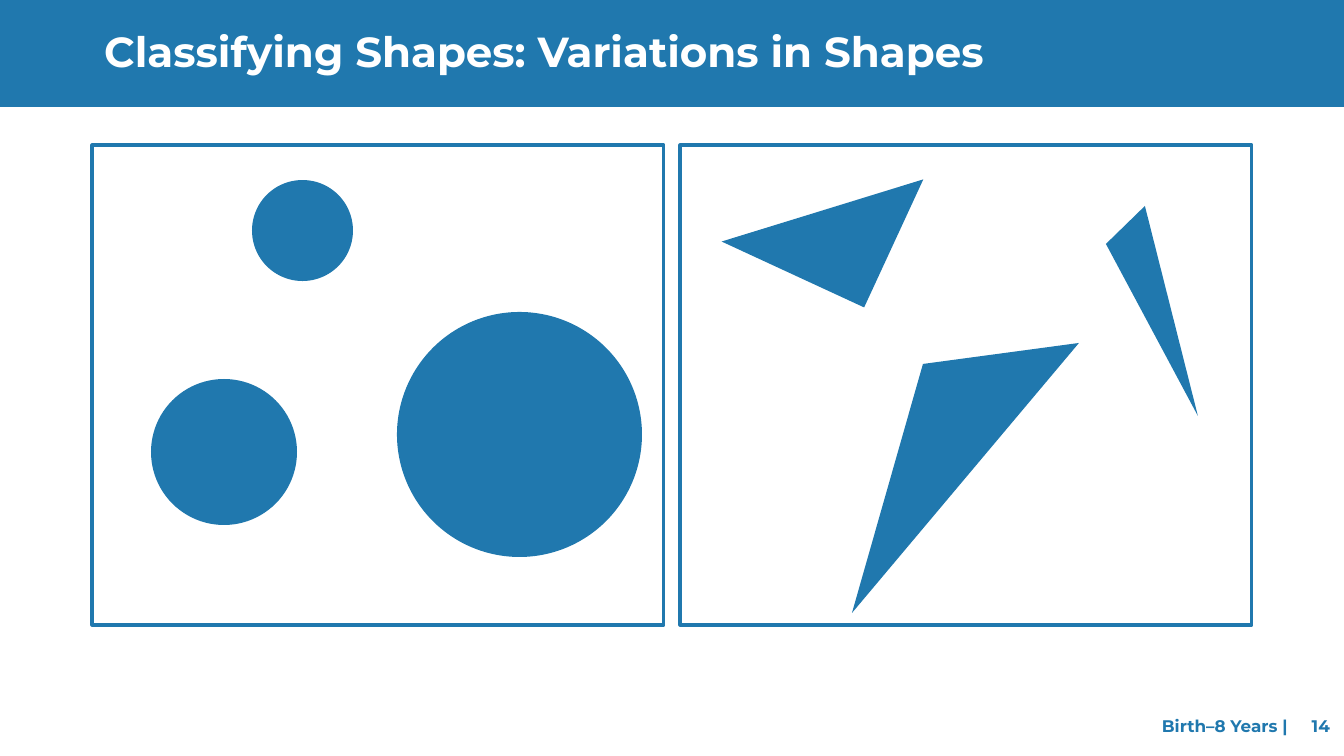
from pptx import Presentation
from pptx import util as u
from pptx.dml.color import RGBColor
from pptx.enum import shapes, text
from pptx.oxml import parse_xml
from pptx.oxml.ns import nsdecls

# Content, lengths in px
PX = 914400 / 100.8
SLIDE = (1344, 756)
COLORS = {"blue": "2078AE", "white": "FFFFFF"}
FONT = "Montserrat"
TITLE = "Classifying Shapes: Variations in Shapes"
FOOTER = "Birth–8 Years |\t14"
BAND = (0, 0, 1344, 107)
TITLE_BOX = (94, 26, 1194, 56)
FOOTER_BOX = (1152, 706, 188, 40)
FOOTER_TAB = 168
PANEL = (92, 145, 572, 480)
PANEL_STEP = 588
CIRCLES = [(252, 180, 101), (397, 312, 245), (151, 379, 146)]  # left, top, diameter
TRIANGLES = [
    [(1079, 343), (852, 613), (923, 364)],
    [(1145, 206), (1198, 416), (1106, 244)],
]
TURNED_TRIANGLE = (744, 140, 157, 141)
TURN = 24.8


def emu(*lengths):
    return [round(length * PX) for length in lengths]


def color(name):
    return RGBColor.from_string(COLORS[name])


def paint(shape):
    shape.fill.solid()
    shape.fill.fore_color.rgb = color("blue")
    shape.line.fill.background()
    shape.shadow.inherit = False
    return shape


def write(frame, words, size, name):
    para = frame.paragraphs[0]
    para.text = words
    para.alignment = text.PP_ALIGN.LEFT
    para.font.name = FONT
    para.font.size = u.Pt(size)
    para.font.bold = True
    para.font.color.rgb = color(name)
    return para


deck = Presentation()
deck.slide_width, deck.slide_height = emu(*SLIDE)
page = deck.slides.add_slide(deck.slide_layouts[5])
preset = shapes.MSO_SHAPE

# Title band and title
paint(page.shapes.add_shape(preset.RECTANGLE, *emu(*BAND)))
title = page.shapes.title
page.shapes._spTree.append(title._element)
title.left, title.top, title.width, title.height = emu(*TITLE_BOX)
title.text_frame.vertical_anchor = text.MSO_ANCHOR.MIDDLE
title.text_frame.auto_size = text.MSO_AUTO_SIZE.SHAPE_TO_FIT_TEXT
write(title.text_frame, TITLE, 30, "white").line_spacing = 0.9

# Footer, with the page number on a right tab
footer = page.shapes.add_textbox(*emu(*FOOTER_BOX)).text_frame
footer.word_wrap = True
footer.margin_right = 0
footer.vertical_anchor = text.MSO_ANCHOR.MIDDLE
tab_stop = parse_xml(
    f'<a:tabLst {nsdecls("a")}><a:tab pos="{emu(FOOTER_TAB)[0]}" algn="r"/></a:tabLst>')
footer.paragraphs[0]._p.get_or_add_pPr().append(tab_stop)
write(footer, FOOTER, 12, "blue")

# Two framed panels, each with a group of shapes
groups = []
for column in range(2):
    left, top, width, height = PANEL
    panel = page.shapes.add_shape(
        preset.RECTANGLE, *emu(left + column * PANEL_STEP, top, width, height))
    panel.fill.background()
    panel.line.color.rgb = color("blue")
    panel.line.width = u.Pt(2.25)
    panel.shadow.inherit = False
    groups.append(page.shapes.add_group_shape().shapes)
circles, triangles = groups

for left, top, diameter in CIRCLES:
    paint(circles.add_shape(preset.OVAL, *emu(left, top, diameter, diameter)))

for corners in TRIANGLES:
    outline = triangles.build_freeform(*corners[0], scale=PX)
    outline.add_line_segments(corners[1:], close=True)
    paint(outline.convert_to_shape())

turned = paint(triangles.add_shape(preset.ISOSCELES_TRIANGLE, *emu(*TURNED_TRIANGLE)))
turned.adjustments[0] = 1
turned.rotation = TURN

deck.save("out.pptx")
